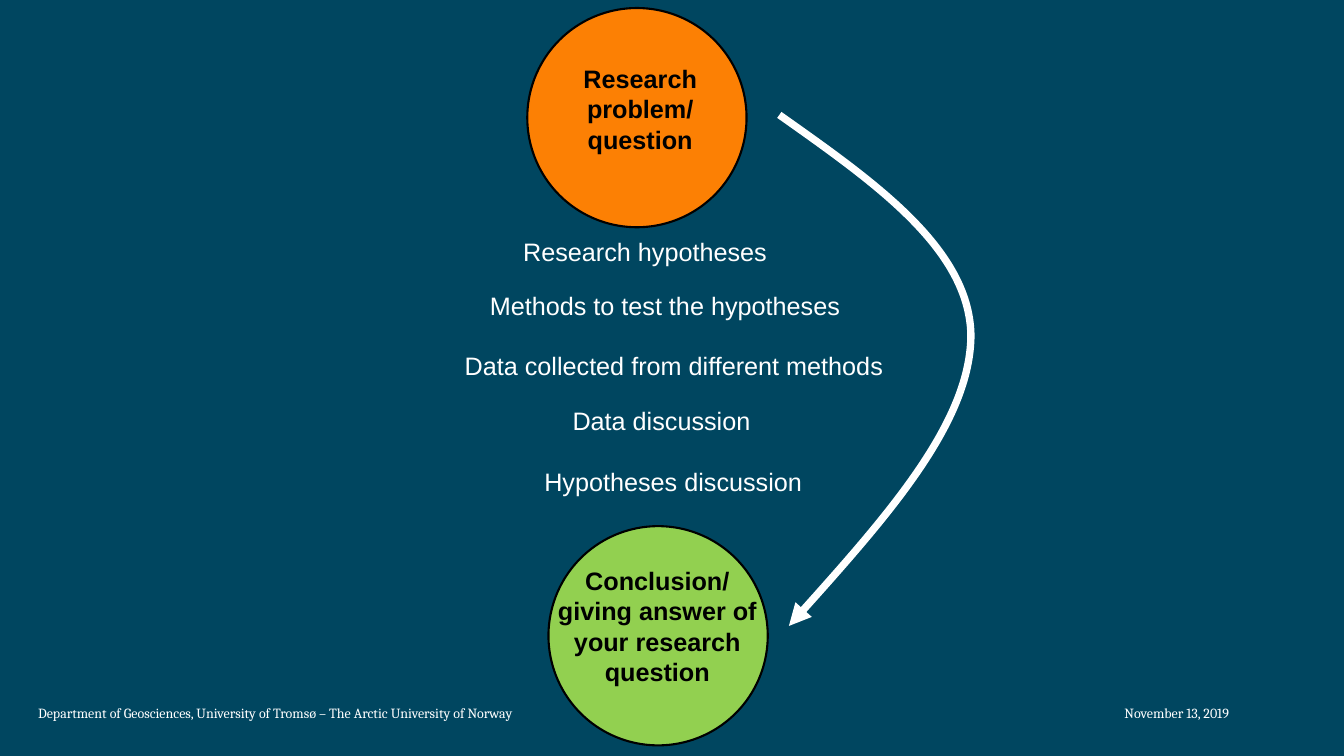
from dataclasses import dataclass

import pptx
import pptx.dml.color
import pptx.enum.shapes
import pptx.enum.text
import pptx.oxml
import pptx.oxml.ns
import pptx.util

SLIDE_W, SLIDE_H = 13.33, 7.5
CENTER = pptx.enum.text.PP_ALIGN.CENTER


@dataclass(frozen=True)
class Theme:
    background: str = "004660"
    problem: str = "FC8004"
    conclusion: str = "92D050"
    dark: str = "000000"
    light: str = "FFFFFF"
    body_font: str = "Arial"
    footer_font: str = "Cambria"
    body_size: float = 18
    footer_size: float = 10
    outline: float = 1.5
    arrow: float = 5.25


THEME = Theme()


def emu(*inches):
    return [pptx.util.Inches(value) for value in inches]


def rgb(color):
    return pptx.dml.color.RGBColor.from_string(color)


def add_text(slide, box, text, color=THEME.light, font=THEME.body_font,
             size=THEME.body_size, bold=False, align=None, wrap=True):
    frame = slide.shapes.add_textbox(*emu(*box)).text_frame
    frame.word_wrap = wrap
    frame.auto_size = pptx.enum.text.MSO_AUTO_SIZE.SHAPE_TO_FIT_TEXT
    frame.text = text
    for paragraph in frame.paragraphs:
        paragraph.alignment = align
        for run in paragraph.runs:
            run.font.name, run.font.size = font, pptx.util.Pt(size)
            run.font.bold = bold
            run.font.color.rgb = rgb(color)
    return frame


def add_milestone(slide, box, fill, text, label):
    """Circle filling the box; label is (dx, dy, width, height) from its corner."""
    left, top, _, _ = box
    circle = slide.shapes.add_shape(
        pptx.enum.shapes.MSO_SHAPE.OVAL, *emu(*box))
    circle.shadow.inherit = False
    circle.fill.solid()
    circle.fill.fore_color.rgb = rgb(fill)
    circle.line.color.rgb = rgb(THEME.dark)
    circle.line.width = pptx.util.Pt(THEME.outline)
    dx, dy, width, height = label
    add_text(slide, (left + dx, top + dy, width, height), text,
             THEME.dark, bold=True, align=CENTER)


def add_steps(slide, box, steps):
    """Each step is (text, left offset, top offset, width) within the box."""
    left, top, _, _ = box
    for text, dx, dy, width in steps:
        add_text(slide, (left + dx, top + dy, width, 0.4), text, wrap=False)


def add_curved_arrow(slide, box):
    """Two Bezier curves bulging to the right, as shares of the box."""
    left, top, width, height = box
    shares = [(0, 0), (0.49, 0.13), (0.99, 0.26), (1, 0.43),
              (1, 0.6), (0.53, 0.8), (0.05, 1)]
    start, *rest = [emu(left + x * width, top + y * height) for x, y in shares]
    builder = slide.shapes.build_freeform(*start)
    builder.add_line_segments(rest, close=False)
    arrow = builder.convert_to_shape()
    arrow.shadow.inherit = False
    arrow.fill.background()
    arrow.line.color.rgb = rgb(THEME.light)
    arrow.line.width = pptx.util.Pt(THEME.arrow)
    ns = pptx.oxml.ns.nsdecls("a")
    # Every three straight segments become one Bezier curve
    segments = arrow.element.findall(".//" + pptx.oxml.ns.qn("a:lnTo"))
    for first in range(0, len(segments), 3):
        curve = pptx.oxml.parse_xml(f"<a:cubicBezTo {ns}/>")
        segments[first].addprevious(curve)
        for segment in segments[first:first + 3]:
            curve.append(segment[0])
            segment.getparent().remove(segment)
    arrow.line._get_or_add_ln().append(
        pptx.oxml.parse_xml(f'<a:tailEnd {ns} type="triangle"/>'))


def add_footer(slide, box, department, date):
    """Department on the left, date at a right-aligned tab."""
    frame = add_text(slide, box, f"{department}\t{date}",
                     font=THEME.footer_font, size=THEME.footer_size)
    properties = frame.paragraphs[0]._p.get_or_add_pPr()
    properties.append(pptx.oxml.parse_xml(
        f'<a:tabLst {pptx.oxml.ns.nsdecls("a")}>'
        f'<a:tab pos="{pptx.util.Inches(11.81)}" algn="r"/></a:tabLst>'))


def main():
    deck = pptx.Presentation()
    deck.slide_width, deck.slide_height = emu(SLIDE_W, SLIDE_H)
    slide = deck.slides.add_slide(deck.slide_layouts[6])
    slide.background.fill.solid()
    slide.background.fill.fore_color.rgb = rgb(THEME.background)

    # Start and end of the research process
    diameter = 0.29 * SLIDE_H
    add_milestone(slide, (5.23, 0.08, diameter, diameter), THEME.problem,
                  "Research problem/\nquestion", (-0.01, 0.5, 2.26, 1.01))
    add_milestone(slide, (5.44, 5.22, diameter, diameter), THEME.conclusion,
                  "Conclusion/\ngiving answer of\nyour research\nquestion",
                  (-2.12, 0.34, 6.4, 1.31))

    # Path from problem to conclusion
    add_curved_arrow(slide, (7.73, 1.14, 1.9, 5.07))
    add_steps(slide, (4.51, 2.3, 4.39, 2.68), [
        ("Research hypotheses", 0.58, 0, 2.64),
        ("Methods to test the hypotheses", 0.25, 0.53, 3.71),
        ("Data collected from different methods", 0, 1.13, 4.39),
        ("Data discussion", 1.07, 1.67, 1.98),
        ("Hypotheses discussion", 0.79, 2.28, 2.78),
    ])

    # Footer
    add_footer(slide, (0.28, 6.94, 12.82, 0.27),
               "Department of Geosciences, University of Tromsø"
               " – The Arctic University of Norway", "November 13, 2019")
    deck.save("out.pptx")


if __name__ == "__main__":
    main()
